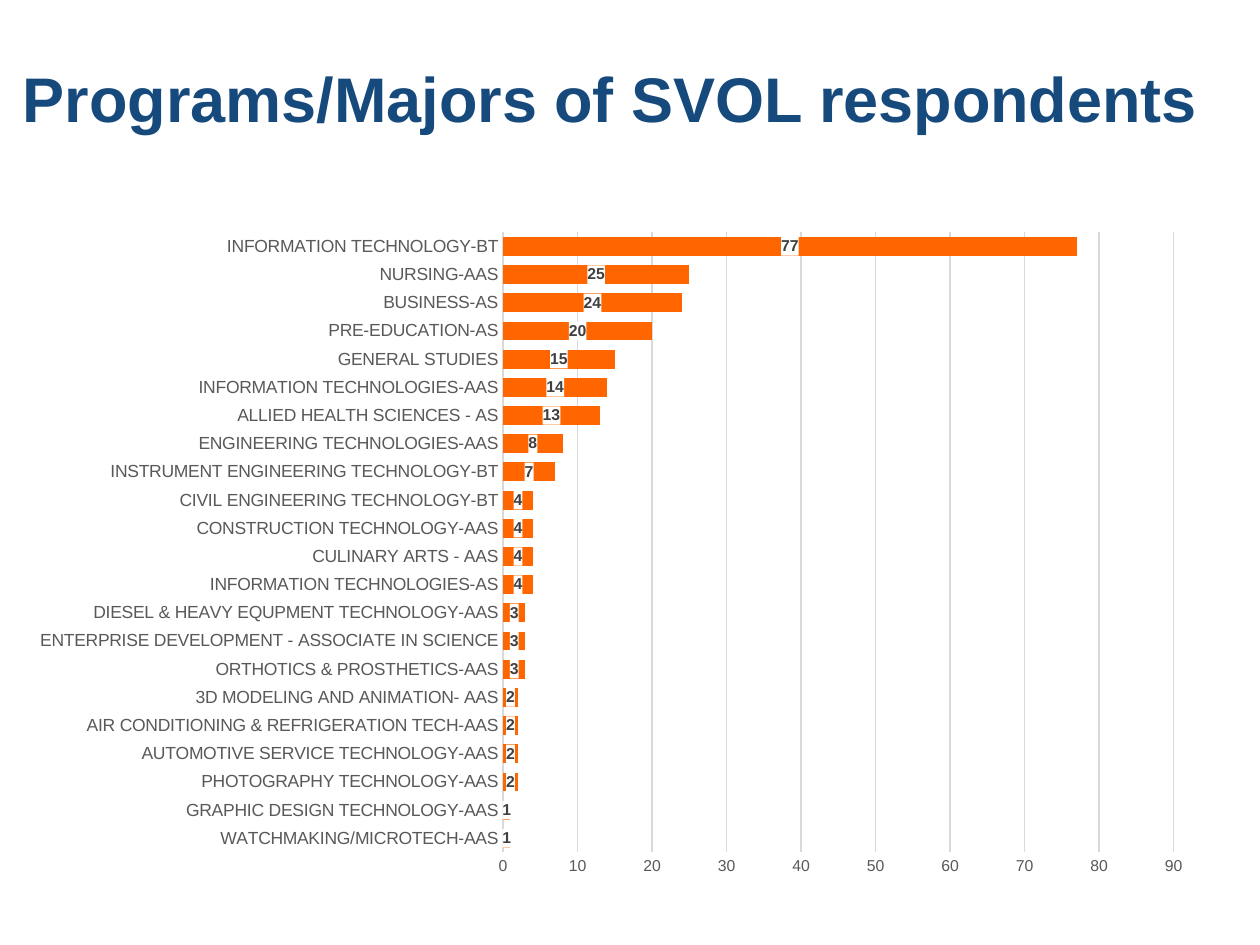
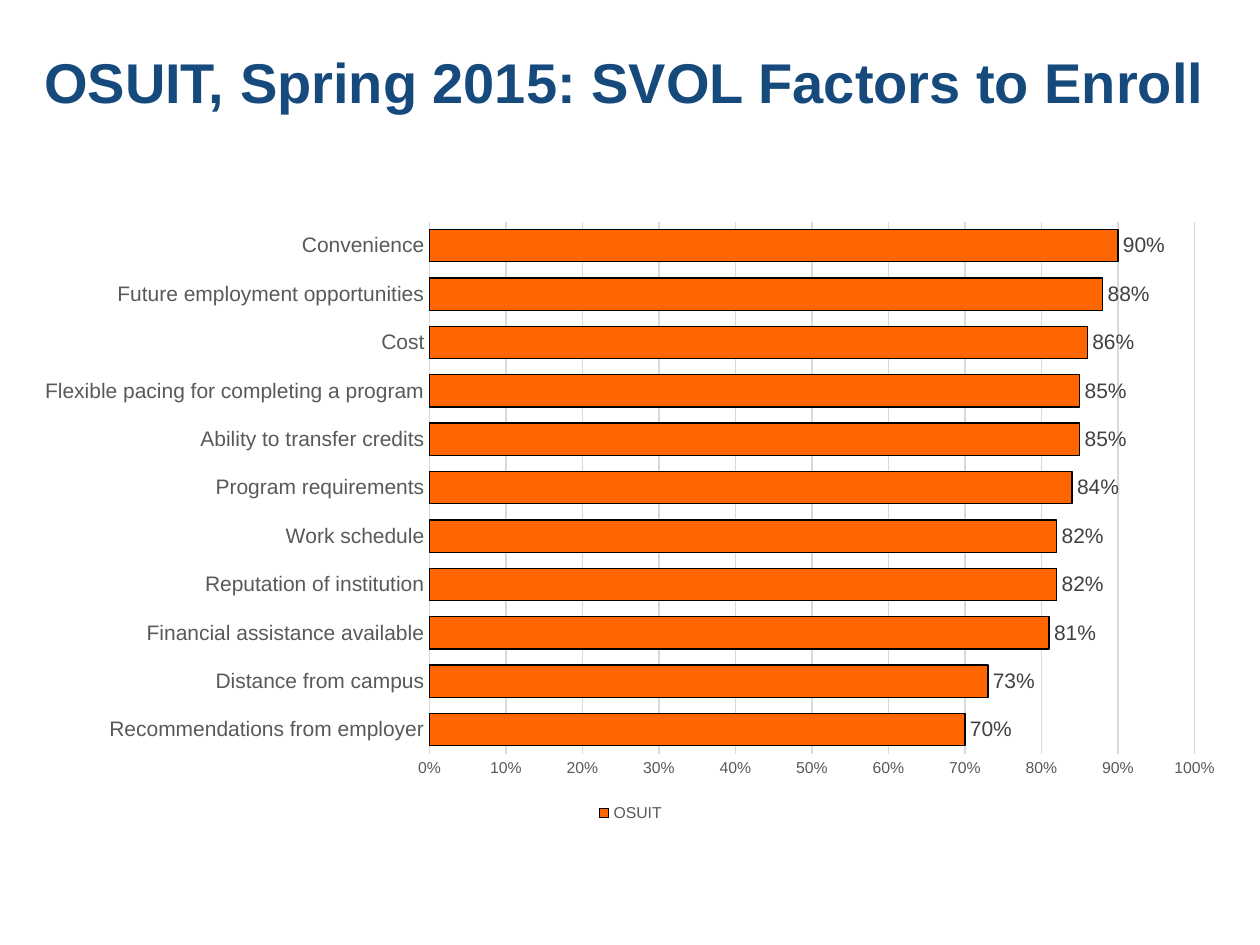
from lxml import etree
from pptx import Presentation
from pptx.chart.data import CategoryChartData
from pptx.dml.color import RGBColor
from pptx.enum.chart import XL_CHART_TYPE as ChartType
from pptx.enum.chart import XL_LABEL_POSITION as LabelPosition
from pptx.enum.chart import XL_LEGEND_POSITION as LegendPosition
from pptx.enum.chart import XL_TICK_MARK as TickMark
from pptx.oxml import parse_xml
from pptx.oxml.ns import nsdecls, qn
from pptx.util import Cm, Pt

# Shared look
NAVY, ORANGE, BLACK = "174A7C", "FF6600", "000000"
AXIS_GREY, LABEL_GREY, GRID_GREY = "595959", "404040", "D9D9D9"


def colour(hex_string):
    return RGBColor.from_string(hex_string)


def format_font(font, size, hex_string, bold=False):
    values = {"name": "Arial", "size": Pt(size), "bold": bold}
    for attribute, value in values.items():
        setattr(font, attribute, value)
    font.color.rgb = colour(hex_string)


# Chart content, listed from the top bar down
programs = [
    ("INFORMATION TECHNOLOGY-BT", 77),
    ("NURSING-AAS", 25),
    ("BUSINESS-AS", 24),
    ("PRE-EDUCATION-AS", 20),
    ("GENERAL STUDIES", 15),
    ("INFORMATION TECHNOLOGIES-AAS", 14),
    ("ALLIED HEALTH SCIENCES - AS", 13),
    ("ENGINEERING TECHNOLOGIES-AAS", 8),
    ("INSTRUMENT ENGINEERING TECHNOLOGY-BT", 7),
    ("CIVIL ENGINEERING TECHNOLOGY-BT", 4),
    ("CONSTRUCTION TECHNOLOGY-AAS", 4),
    ("CULINARY ARTS - AAS", 4),
    ("INFORMATION TECHNOLOGIES-AS", 4),
    ("DIESEL & HEAVY EQUPMENT TECHNOLOGY-AAS", 3),
    ("ENTERPRISE DEVELOPMENT - ASSOCIATE IN SCIENCE", 3),
    ("ORTHOTICS & PROSTHETICS-AAS", 3),
    ("3D MODELING AND ANIMATION- AAS", 2),
    ("AIR CONDITIONING & REFRIGERATION TECH-AAS", 2),
    ("AUTOMOTIVE SERVICE TECHNOLOGY-AAS", 2),
    ("PHOTOGRAPHY TECHNOLOGY-AAS", 2),
    ("GRAPHIC DESIGN TECHNOLOGY-AAS", 1),
    ("WATCHMAKING/MICROTECH-AAS", 1),
]
factors = [
    ("Convenience", 0.9),
    ("Future employment opportunities", 0.88),
    ("Cost", 0.86),
    ("Flexible pacing for completing a program", 0.85),
    ("Ability to transfer credits", 0.85),
    ("Program requirements", 0.84),
    ("Work schedule", 0.82),
    ("Reputation of institution", 0.82),
    ("Financial assistance available", 0.81),
    ("Distance from campus", 0.73),
    ("Recommendations from employer", 0.7),
]

# What differs between the two slides; boxes in cm, plot as shares of the chart
pages = [
    {
        "title": "Programs/Majors of SVOL respondents", "title_size": 36,
        "title_box": (0.21, 1.07, 24.33, 1.91),
        "chart_box": (0.21, 4.23, 23.93, 13.77),
        "plot": (0.415, 0.033, 0.565, 0.908),
        "type": ChartType.BAR_STACKED, "series": "Series 1", "bars": programs,
        "number_format": "General", "maximum": 90, "step": 10,
        "category_size": 10, "label_size": 9, "label_bold": True,
        "label_position": LabelPosition.CENTER, "label_fill": "FFFFFF",
        "outline": None, "legend": False,
    },
    {
        "title": "OSUIT, Spring 2015: SVOL Factors to Enroll", "title_size": 32,
        "title_box": (0.64, 0.84, 24.13, 2.34),
        "chart_box": (0.43, 4.23, 24.56, 12.45),
        "plot": (0.335, 0.019, 0.628, 0.862),
        "type": ChartType.BAR_CLUSTERED, "series": "OSUIT", "bars": factors,
        "number_format": "0%", "maximum": 1, "step": 0.1,
        "category_size": 12, "label_size": 12, "label_bold": False,
        "label_position": LabelPosition.OUTSIDE_END, "label_fill": None,
        "outline": BLACK, "legend": True,
    },
]

presentation = Presentation()
presentation.slide_width, presentation.slide_height = Cm(25.4), Cm(19.05)

for page in pages:
    slide = presentation.slides.add_slide(presentation.slide_layouts[6])

    # Title
    title = slide.shapes.add_textbox(*map(Cm, page["title_box"]))
    title.text_frame.word_wrap = True
    paragraph = title.text_frame.paragraphs[0]
    paragraph.text = page["title"]
    format_font(paragraph.runs[0].font, page["title_size"], NAVY, bold=True)

    # Bar chart: bars are drawn from the bottom up
    chart_data = CategoryChartData(number_format=page["number_format"])
    names, values = zip(*reversed(page["bars"]))
    chart_data.categories = names
    chart_data.add_series(page["series"], values)
    chart = slide.shapes.add_chart(
        page["type"], *map(Cm, page["chart_box"]), chart_data).chart
    format_font(chart.font, 10, BLACK)
    chart.has_title = False

    # Legend
    chart.has_legend = page["legend"]
    if page["legend"]:
        chart.legend.position = LegendPosition.BOTTOM
        chart.legend.include_in_layout = False
        format_font(chart.legend.font, 9, AXIS_GREY)

    # Axes and grid
    category_axis, value_axis = chart.category_axis, chart.value_axis
    for axis, size in ((category_axis, page["category_size"]), (value_axis, 9)):
        axis.major_tick_mark = axis.minor_tick_mark = TickMark.NONE
        format_font(axis.tick_labels.font, size, AXIS_GREY)
    value_axis.has_major_gridlines = True
    for line in (category_axis.format.line, value_axis.major_gridlines.format.line):
        line.color.rgb = colour(GRID_GREY)
        line.width = Pt(0.75)
    value_axis.format.line.fill.background()
    value_axis.minimum_scale = 0
    value_axis.maximum_scale = page["maximum"]
    value_axis.major_unit = page["step"]
    value_axis.tick_labels.number_format = page["number_format"]
    value_axis.tick_labels.number_format_is_linked = False

    # Bars
    plot = chart.plots[0]
    plot.gap_width = 50
    plot.vary_by_categories = False
    series = plot.series[0]
    series.format.fill.solid()
    series.format.fill.fore_color.rgb = colour(ORANGE)
    if page["outline"]:
        series.format.line.color.rgb = colour(page["outline"])
        series.format.line.width = Pt(0.75)
    else:
        series.format.line.fill.background()

    # Value labels
    labels = series.data_labels
    label_values = {
        "show_value": True,
        "position": page["label_position"],
        "number_format": page["number_format"],
        "number_format_is_linked": False,
    }
    for attribute, value in label_values.items():
        setattr(labels, attribute, value)
    format_font(labels.font, page["label_size"], LABEL_GREY, page["label_bold"])
    if page["label_fill"]:
        label_box = parse_xml(
            f'<c:spPr {nsdecls("c", "a")}><a:solidFill>'
            f'<a:srgbClr val="{page["label_fill"]}"/></a:solidFill></c:spPr>')
        label_xml = series._element.find(qn("c:dLbls"))
        label_xml.find(qn("c:txPr")).addprevious(label_box)

    # Fixed inner plot area
    plot_area = chart._chartSpace.chart.plotArea
    for layout in plot_area.findall(qn("c:layout")):
        plot_area.remove(layout)
    layout = etree.Element(qn("c:layout"))
    manual = etree.SubElement(layout, qn("c:manualLayout"))
    settings = [("layoutTarget", "inner"), ("xMode", "edge"), ("yMode", "edge")]
    for tag, value in settings + list(zip("xywh", page["plot"])):
        etree.SubElement(manual, qn(f"c:{tag}"), val=str(value))
    plot_area.insert(0, layout)

presentation.save("out.pptx")
